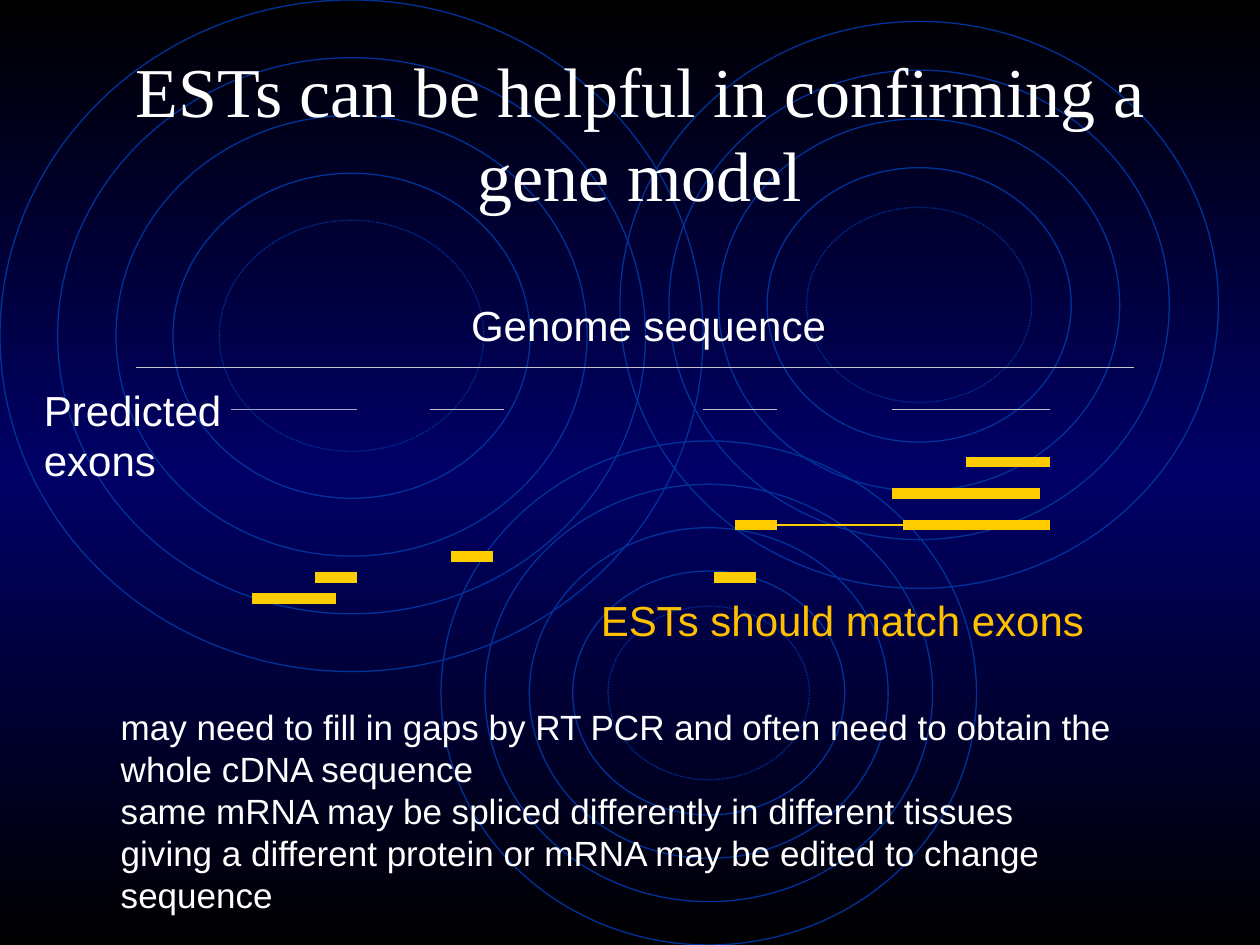
from copy import deepcopy
from typing import NamedTuple

from pptx import Presentation
from pptx.dml.color import RGBColor
from pptx.enum.dml import MSO_LINE
from pptx.enum.shapes import MSO_CONNECTOR, MSO_SHAPE
from pptx.enum.text import MSO_ANCHOR, MSO_AUTO_SIZE, PP_ALIGN
from pptx.oxml.ns import qn
from pptx.oxml.xmlchemy import OxmlElement
from pptx.slide import Slide
from pptx.text.text import TextFrame
from pptx.util import Inches, Pt

STRAIGHT = MSO_CONNECTOR.STRAIGHT
OVAL = MSO_SHAPE.OVAL
DOTTED = MSO_LINE.ROUND_DOT
MIDDLE = MSO_ANCHOR.MIDDLE
CENTER = PP_ALIGN.CENTER
FIXED_SIZE = MSO_AUTO_SIZE.NONE
FIT_SHAPE = MSO_AUTO_SIZE.SHAPE_TO_FIT_TEXT

BLACK = RGBColor(0x00, 0x00, 0x00)
NAVY = RGBColor(0x00, 0x00, 0x66)
RING_BLUE = RGBColor(0x00, 0x33, 0x99)
WHITE = RGBColor(0xFF, 0xFF, 0xFF)
GREY = RGBColor(0xC4, 0xC4, 0xC4)
BLUE_GREY = RGBColor(0xA5, 0xA9, 0xC6)
EST_YELLOW = RGBColor(0xFF, 0xCC, 0x00)
EST_AMBER = RGBColor(0xFF, 0xC0, 0x00)

CELL = Inches(1) / 12
THIN = 0.75
THICK = 6


class Ripple(NamedTuple):
    left: float
    top: float
    width: float
    height: float


class Segment(NamedTuple):
    row: int
    start: int
    end: int
    color: RGBColor = EST_YELLOW
    weight: float = THICK


class Label(NamedTuple):
    left: float
    top: float
    width: float
    height: float
    text: str
    size: int
    color: RGBColor = WHITE
    wrap: bool = False


RIPPLES = [
    Ripple(0, 0, 5.58, 5.33),
    Ripple(3.5, 3.5, 4.25, 4),
    Ripple(4.92, 0.17, 4.75, 4.5),
]
RING_INSETS = [(0, 0), (0.082, 0.086), (0.165, 0.172), (0.246, 0.258), (0.312, 0.328)]

SEGMENTS = [
    Segment(35, 13, 108, GREY, THIN),
    Segment(39, 22, 34, BLUE_GREY, THIN),
    Segment(39, 41, 48, GREY, THIN),
    Segment(39, 67, 74, GREY, THIN),
    Segment(39, 85, 100, GREY, THIN),
    Segment(44, 92, 100),
    Segment(47, 85, 99),
    Segment(50, 86, 100),
    Segment(50, 70, 74),
    Segment(50, 74, 87, EST_YELLOW, THIN),
    Segment(53, 43, 47),
    Segment(55, 30, 34),
    Segment(55, 68, 72),
    Segment(57, 24, 32),
]

LABELS = [
    Label(3.64, 2.33, 3.14, 0.51, "Genome sequence", 24),
    Label(0.25, 3, 1.72, 0.94, "Predicted\nexons", 24),
    Label(4.67, 4.67, 4.07, 0.51, "ESTs should match exons", 24, EST_AMBER),
    Label(
        0.86, 5.55, 8.08, 1.45,
        "may need to fill in gaps by RT PCR and often need to obtain the whole cDNA sequence\n"
        "same mRNA may be spliced differently in different tissues giving a different protein "
        "or mRNA may be edited to change sequence",
        20, wrap=True,
    ),
]


def paint_background(slide: Slide) -> None:
    fill = slide.background.fill
    fill.gradient()
    fill.gradient_angle = 270
    stop_list = slide.element.find(".//" + qn("a:gsLst"))
    stop_list.insert(1, deepcopy(stop_list[0]))
    for stop, color, position in zip(fill.gradient_stops, (BLACK, NAVY, BLACK), (0, 0.5, 1)):
        stop.color.rgb = color
        stop.position = position


def draw_ripple(slide: Slide, ripple: Ripple) -> None:
    for inset_x, inset_y in RING_INSETS:
        ring = slide.shapes.add_shape(
            OVAL,
            Inches(ripple.left + inset_x * ripple.width),
            Inches(ripple.top + inset_y * ripple.height),
            Inches(ripple.width * (1 - 2 * inset_x)),
            Inches(ripple.height * (1 - 2 * inset_y)),
        )
        ring.shadow.inherit = False
        ring.fill.background()
        ring.line.color.rgb = RING_BLUE
        ring.line.width = Pt(THIN)
        if (inset_x, inset_y) == RING_INSETS[-1]:
            ring.line.dash_style = DOTTED


def draw_segment(slide: Slide, segment: Segment) -> None:
    y = round(segment.row * CELL)
    line = slide.shapes.add_connector(
        STRAIGHT, round(segment.start * CELL), y, round(segment.end * CELL), y
    )
    line.line.color.rgb = segment.color
    line.line.width = Pt(segment.weight)
    line.element.spPr.append(OxmlElement("a:effectLst"))


def format_runs(frame: TextFrame, font: str, size: int, color: RGBColor) -> None:
    for paragraph in frame.paragraphs:
        for run in paragraph.runs:
            run.font.name = font
            run.font.size = Pt(size)
            run.font.color.rgb = color


def write_label(slide: Slide, label: Label) -> None:
    box = slide.shapes.add_textbox(*map(Inches, label[:4]))
    frame = box.text_frame
    frame.text = label.text
    frame.word_wrap = label.wrap
    frame.auto_size = FIT_SHAPE
    format_runs(frame, "Arial", label.size, label.color)


def write_title(slide: Slide) -> None:
    title = slide.shapes.title
    title.left, title.top = Inches(0.83), Inches(0.42)
    title.width, title.height = Inches(8.5), Inches(1.25)
    frame = title.text_frame
    frame.text = "ESTs can be helpful in confirming a gene model"
    frame.auto_size = FIXED_SIZE
    frame.vertical_anchor = MIDDLE
    frame.paragraphs[0].alignment = CENTER
    format_runs(frame, "Times New Roman", 40, WHITE)
    slide.shapes.element.append(title.element)


def main() -> None:
    deck = Presentation()
    deck.slide_width, deck.slide_height = Inches(10), Inches(7.5)
    slide = deck.slides.add_slide(deck.slide_layouts[5])
    paint_background(slide)
    for ripple in RIPPLES:
        draw_ripple(slide, ripple)
    write_title(slide)
    for segment in SEGMENTS:
        draw_segment(slide, segment)
    for label in LABELS:
        write_label(slide, label)
    deck.save("out.pptx")


if __name__ == "__main__":
    main()
